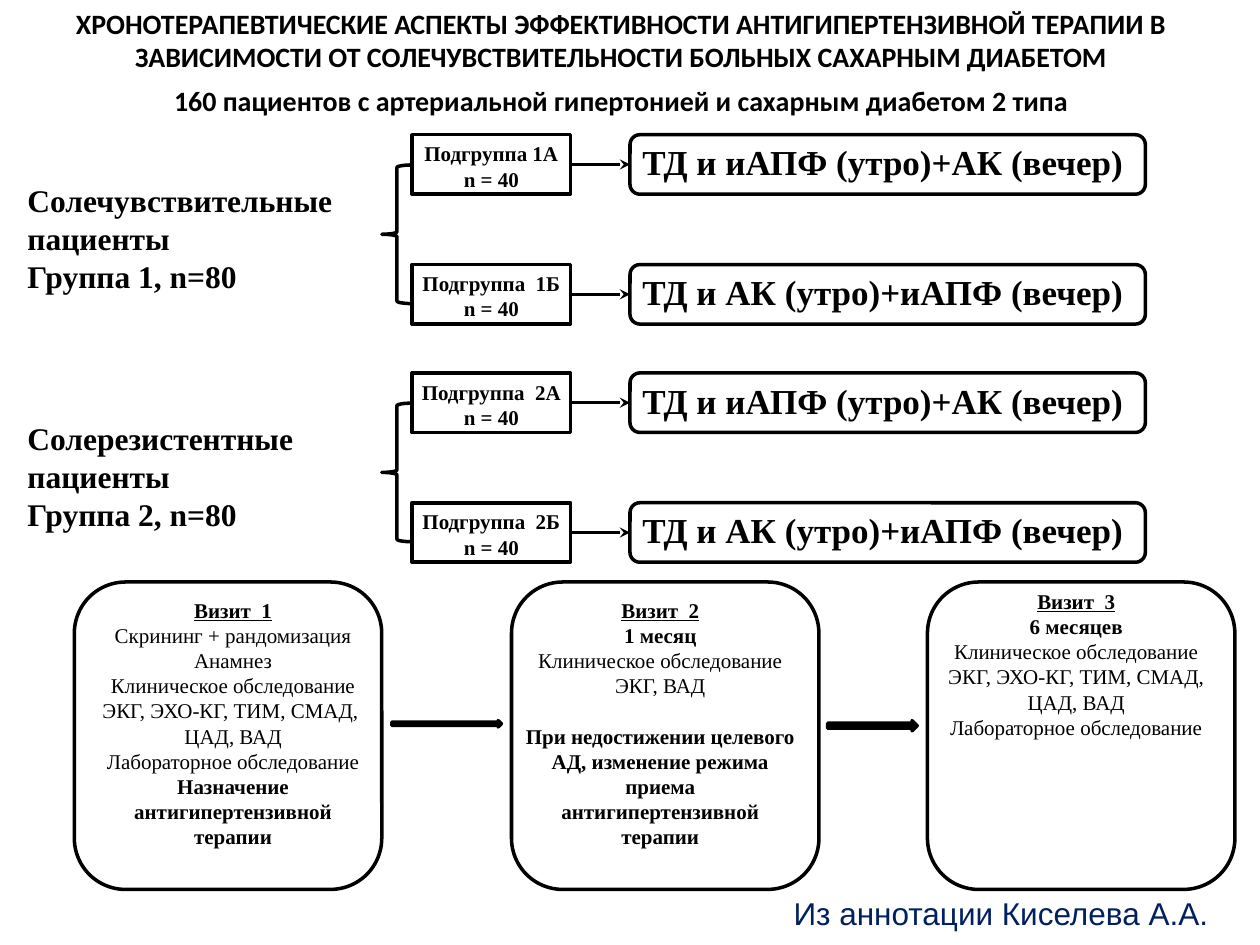
from dataclasses import dataclass

from lxml.etree import SubElement
from pptx import Presentation
from pptx.dml.color import RGBColor
from pptx.enum.shapes import MSO_CONNECTOR, MSO_SHAPE
from pptx.enum.text import MSO_ANCHOR, MSO_AUTO_SIZE, PP_ALIGN
from pptx.oxml.ns import qn
from pptx.util import Pt

BLACK = RGBColor(0x00, 0x00, 0x00)
BLUE = RGBColor(0x4F, 0x81, 0xBD)
NAVY = RGBColor(0x00, 0x20, 0x60)
SERIF = "Times New Roman"

BOX_HEIGHT = 34
SUBGROUP_STEP = 74.2
VISIT_TOP, VISIT_SIZE = 332.6, 175.7


@dataclass
class Group:
    top: float
    number: int
    label: str


@dataclass
class Line:
    text: str
    bold: bool = False
    underline: bool = False
    space_before: float = 0


@dataclass
class Visit:
    left: float
    text_left: float
    text_top: float
    lines: list[Line]


@dataclass
class VisitArrow:
    left: float
    width: float
    height: float
    color: RGBColor


GROUPS = [
    Group(77, 1, "Солечувствительные пациенты"),
    Group(213.1, 2, "Солерезистентные пациенты"),
]
# Subgroup letter, and the treatment it receives
TREATMENTS = [
    ("А", "ТД и иАПФ (утро)+АК (вечер)"),
    ("Б", "ТД и АК (утро)+иАПФ (вечер)"),
]
VISITS = [
    Visit(42.5, 48.2, 337.7, [
        Line("Визит  1", True, True),
        Line("Скрининг + рандомизация"),
        Line("Анамнез"),
        Line("Клиническое обследование"),
        Line("ЭКГ, ЭХО-КГ, ТИМ, СМАД,  ЦАД, ВАД"),
        Line("Лабораторное обследование"),
        Line("Назначение антигипертензивной терапии", True),
    ]),
    Visit(292.3, 292.3, 337.7, [
        Line("Визит  2", True, True),
        Line("1 месяц", True),
        Line("Клиническое обследование"),
        Line("ЭКГ, ВАД"),
        Line("При недостижении целевого АД, изменение режима приема "
             "антигипертензивной терапии", True, space_before=14.4),
    ]),
    Visit(530, 530, 332.6, [
        Line("Визит  3", True, True),
        Line("6 месяцев", True),
        Line("Клиническое обследование"),
        Line("ЭКГ, ЭХО-КГ, ТИМ, СМАД, ЦАД, ВАД"),
        Line("Лабораторное обследование"),
    ]),
]
VISIT_ARROWS = [
    VisitArrow(223.9, 62.6, 3.6, BLUE),
    VisitArrow(473, 51.1, 5.8, BLACK),
]


def add_outline(page, kind: MSO_SHAPE, left: float, top: float,
                width: float, height: float, fill: RGBColor | None = None):
    shape = page.shapes.add_shape(kind, Pt(left), Pt(top), Pt(width), Pt(height))
    shape.shadow.inherit = False
    shape.line.color.rgb = BLACK
    shape.line.width = Pt(2)
    if fill is None:
        shape.fill.background()
    else:
        shape.fill.solid()
        shape.fill.fore_color.rgb = fill
    return shape


def write_lines(frame, lines: list[Line], size: float, font: str = SERIF,
                color: RGBColor = BLACK, align: PP_ALIGN = PP_ALIGN.CENTER) -> None:
    frame.text = "\n".join(line.text for line in lines)
    for para, line in zip(frame.paragraphs, lines):
        para.alignment = align
        para.space_before = Pt(line.space_before)
        for span in para.runs:
            span.font.name = font
            span.font.size = Pt(size)
            span.font.bold = line.bold
            span.font.underline = line.underline
            span.font.color.rgb = color


def add_text(page, left: float, top: float, width: float, height: float,
             lines: list[Line], size: float, wrap: bool = True, **style) -> None:
    box = page.shapes.add_textbox(Pt(left), Pt(top), Pt(width), Pt(height))
    box.text_frame.word_wrap = wrap
    write_lines(box.text_frame, lines, size, **style)


def add_arrow(page, left: float, right: float, y: float) -> None:
    arrow = page.shapes.add_connector(
        MSO_CONNECTOR.STRAIGHT, Pt(left), Pt(y), Pt(right), Pt(y))
    arrow.line.color.rgb = BLACK
    arrow.line.width = Pt(1.5)
    SubElement(arrow.line._get_or_add_ln(), qn("a:tailEnd"), type="stealth")
    SubElement(arrow._element.spPr, qn("a:effectLst"))


def add_group(page, group: Group) -> None:
    add_text(page, 8.6, group.top + 23, 215.3, 72.7,
             [Line(group.label, True), Line(f"Группа {group.number}, n=80", True)],
             18, align=PP_ALIGN.LEFT)
    add_outline(page, MSO_SHAPE.LEFT_BRACE, 218.2, group.top + 17.3, 17.3, 79.2)
    for index, (letter, treatment) in enumerate(TREATMENTS):
        top = group.top + index * SUBGROUP_STEP
        gap = " " if (group.number, letter) == (1, "А") else "  "
        add_outline(page, MSO_SHAPE.RECTANGLE, 235.4, top, 90.7, BOX_HEIGHT)
        add_text(page, 229.7, top, 102.2, 36,
                 [Line(f"Подгруппа{gap}{group.number}{letter}", True),
                  Line("n = 40", True)], 12)
        add_arrow(page, 326.2, 360, top + BOX_HEIGHT / 2)
        add_outline(page, MSO_SHAPE.ROUNDED_RECTANGLE, 360, top, 294.5, BOX_HEIGHT)
        add_text(page, 360, top, 298, 31.7, [Line(treatment, True)], 20,
                 align=PP_ALIGN.LEFT)


def add_visit(page, visit: Visit) -> None:
    add_outline(page, MSO_SHAPE.ROUNDED_RECTANGLE, visit.left, VISIT_TOP,
                VISIT_SIZE, VISIT_SIZE)
    add_text(page, visit.text_left, visit.text_top, 170, 152.6, visit.lines, 12)


def add_title(page) -> None:
    title = page.shapes.title
    title.left, title.top, title.width, title.height = Pt(20.2), Pt(0), Pt(669.6), Pt(71.3)
    frame = title.text_frame
    frame.word_wrap = True
    frame.auto_size = MSO_AUTO_SIZE.NONE
    frame.vertical_anchor = MSO_ANCHOR.TOP
    write_lines(frame, [
        Line("ХРОНОТЕРАПЕВТИЧЕСКИЕ АСПЕКТЫ ЭФФЕКТИВНОСТИ АНТИГИПЕРТЕНЗИВНОЙ ТЕРАПИИ "
             "В ЗАВИСИМОСТИ ОТ СОЛЕЧУВСТВИТЕЛЬНОСТИ БОЛЬНЫХ САХАРНЫМ ДИАБЕТОМ", True),
        Line("160 пациентов с артериальной гипертонией и сахарным диабетом 2 типа",
             True, space_before=6),
    ], 16, font="Calibri")


def main() -> None:
    deck = Presentation()
    deck.slide_width, deck.slide_height = Pt(720), Pt(540)
    page = deck.slides.add_slide(deck.slide_layouts[5])

    add_title(page)

    # Patient groups with their subgroups and treatments
    for group in GROUPS:
        add_group(page, group)

    # Visit timeline
    for visit in VISITS:
        add_visit(page, visit)
    for arrow in VISIT_ARROWS:
        add_outline(page, MSO_SHAPE.RIGHT_ARROW, arrow.left, 411.8,
                    arrow.width, arrow.height, arrow.color)

    # Attribution
    add_text(page, 446.4, 507.6, 254.2, 28.8, [Line("Из аннотации Киселева А.А.")],
             18, wrap=False, font="Arial", color=NAVY, align=PP_ALIGN.LEFT)

    deck.save("out.pptx")


if __name__ == "__main__":
    main()
